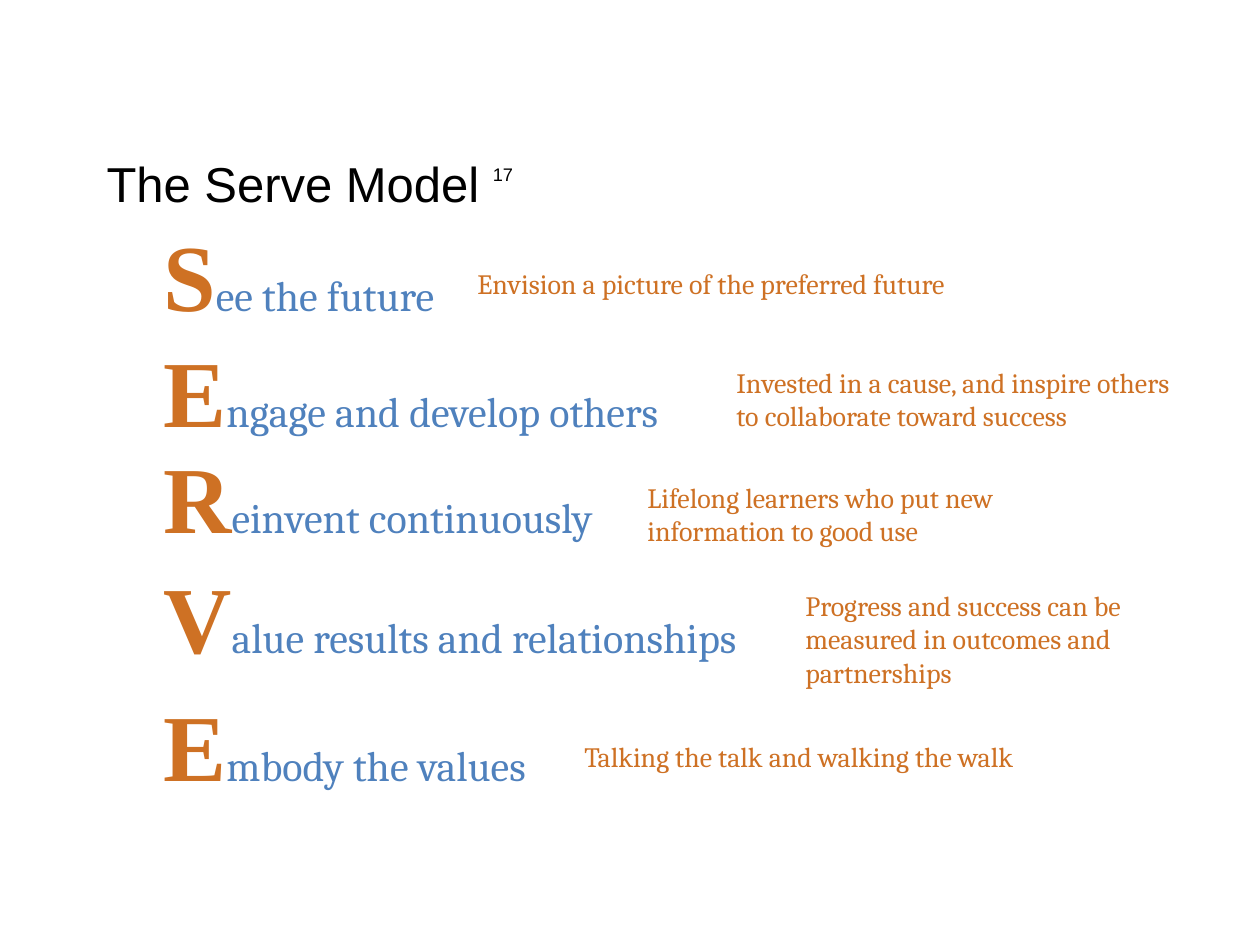
from pptx import Presentation
from pptx.dml.color import RGBColor
from pptx.enum.shapes import MSO_SHAPE
from pptx.enum.text import MSO_ANCHOR, PP_ALIGN
from pptx.util import Pt

RECT = MSO_SHAPE.RECTANGLE
TOP = MSO_ANCHOR.TOP
LEFT = PP_ALIGN.LEFT
BLACK = RGBColor(0x00, 0x00, 0x00)
WHITE = RGBColor(0xFF, 0xFF, 0xFF)
ORANGE = RGBColor(0xCE, 0x71, 0x24)
BLUE = RGBColor(0x4F, 0x81, 0xBD)
SCALE = 914400 / 126
ROWS = [
    ("S", "ee the future", (151, 199, 441, 142), 1.1,
     "Envision a picture of the preferred future", (465, 260, 567, 47)),
    ("E", "ngage and develop others", (151, 315, 640, 142), 1.1,
     "Invested in a cause, and inspire others to collaborate toward success",
     (724, 359, 483, 81)),
    ("R", "einvent continuously", (151, 433, 679, 127), 1.0,
     "Lifelong learners who put new information to good use",
     (635, 474, 397, 81)),
    ("V", "alue results and relationships", (151, 553, 708, 127), 1.0,
     "Progress and success can be measured in outcomes and partnerships",
     (793, 582, 410, 115)),
    ("E", "mbody the values", (151, 670, 503, 142), 1.1,
     "Talking the talk and walking the walk", (572, 733, 490, 47)),
]


def px(num):
    """Turn pixels into EMU."""
    return round(num * SCALE)


def add_run(para, text, face, size, color, bold=False):
    """Add one formatted run to a paragraph."""
    run = para.add_run()
    run.text = text
    font = run.font
    font.name, font.size, font.bold = face, Pt(size), bold
    font.color.rgb = color
    return run


def set_frame(shape):
    """Wrap text from the top left and return the first paragraph."""
    frame = shape.text_frame
    frame.word_wrap = True
    frame.vertical_anchor = TOP
    para = frame.paragraphs[0]
    para.alignment = LEFT
    return para


def add_title(slide):
    """Fill the title and raise its note number."""
    title = slide.shapes.title
    title.left, title.top, title.width, title.height = map(
        px, (94, 147, 1103, 116))
    para = set_frame(title)
    add_run(para, "The Serve Model ", "Arial", 28, BLACK)
    note = add_run(para, "17", "Arial", 18, BLACK)
    note.font._element.set("baseline", "66000")


def add_head(slide, cap, rest, area, space):
    """Add a heading with a large first letter."""
    para = set_frame(slide.shapes.add_textbox(*map(px, area)))
    para.line_spacing = space
    add_run(para, cap, "Times New Roman", 54, ORANGE, True)
    add_run(para, rest, "Cambria", 24, BLUE)


def add_note(slide, text, area):
    """Add a white box that explains a heading."""
    box = slide.shapes.add_shape(RECT, *map(px, area))
    box.shadow.inherit = False
    box.fill.solid()
    box.fill.fore_color.rgb = WHITE
    box.line.fill.background()
    para = set_frame(box)
    para.space_after = Pt(12)
    add_run(para, text, "Cambria", 16, ORANGE)


def main():
    """Build and save the slide."""
    deck = Presentation()
    deck.slide_width, deck.slide_height = px(1260), px(945)
    slide = deck.slides.add_slide(deck.slide_layouts[5])
    add_title(slide)
    for cap, rest, area, space, _, _ in ROWS:
        add_head(slide, cap, rest, area, space)
    for _, _, _, _, text, area in ROWS:
        add_note(slide, text, area)
    deck.save("out.pptx")


if __name__ == "__main__":
    main()
